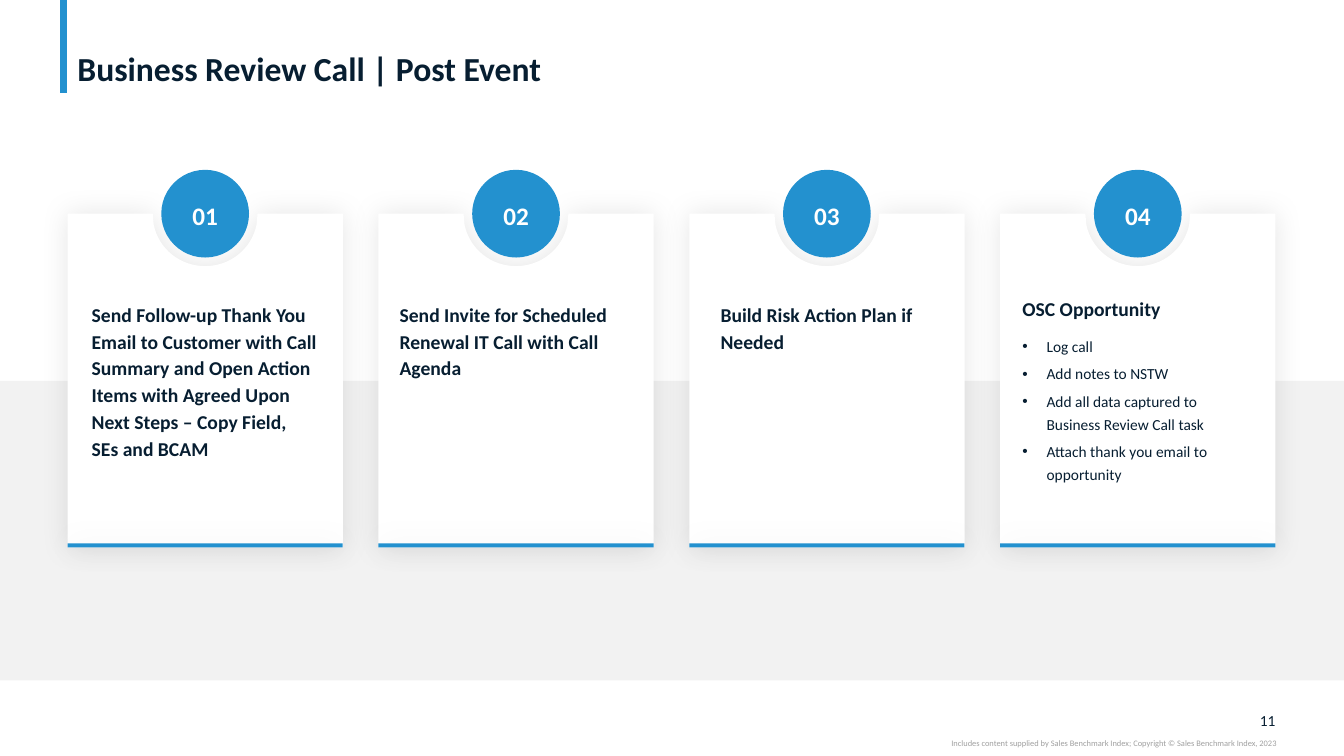
from lxml import etree
from pptx import Presentation
from pptx.dml.color import RGBColor
from pptx.enum.shapes import MSO_CONNECTOR, MSO_SHAPE
from pptx.enum.text import MSO_ANCHOR, PP_ALIGN
from pptx.oxml.ns import qn
from pptx.util import Inches, Pt

LINE = MSO_CONNECTOR.STRAIGHT
RECT, OVAL = MSO_SHAPE.RECTANGLE, MSO_SHAPE.OVAL
TOP, MIDDLE, BOTTOM = MSO_ANCHOR.TOP, MSO_ANCHOR.MIDDLE, MSO_ANCHOR.BOTTOM
LEFT, CENTER, RIGHT = PP_ALIGN.LEFT, PP_ALIGN.CENTER, PP_ALIGN.RIGHT

BLUE = RGBColor(0x23, 0x91, 0xCF)
NAVY = RGBColor(0x07, 0x1E, 0x31)
WHITE = RGBColor(0xFF, 0xFF, 0xFF)
PALE = RGBColor(0xF2, 0xF2, 0xF2)
GRAY = RGBColor(0xA0, 0xA0, 0xA0)
FONT = "Calibri"

WIDTH, HEIGHT = 13.33, 7.5
CARD_W, CARD_H, CARD_Y = 2.73, 3.31, 2.12
FIRST_X, LAST_X = 0.67, 9.92
DISC, BAR = 0.87, 0.04

# Left half of the notch, from the middle of the panel's top edge:
# two corners, then the control points of a curve down to its lowest point
NOTCH = [(-0.52, 0), (-0.51, 0.11), (-0.46, 0.35), (-0.25, 0.52)]
DEPTH = 0.52

# Heading, its left inset in the card, its width, height and spacing, bullets
CARDS = [
    ("Send Follow-up Thank You Email to Customer with Call Summary and Open "
     "Action Items with Agreed Upon Next Steps – Copy Field, SEs and BCAM",
     0.24, 2.24, 1.87, 1.14, []),
    ("Send Invite for Scheduled Renewal IT Call with Call Agenda",
     0.21, 2.3, 0.8, 1.14, []),
    ("Build Risk Action Plan if Needed", 0.31, 2.07, 0.53, 1.14, []),
    ("OSC Opportunity", 0.22, 2.24, 0.22, 0.9,
     ["Log call", "Add notes to NSTW",
      "Add all data captured to Business Review Call task",
      "Attach thank you email to opportunity"]),
]


def paint(shape, color):
    shape.fill.solid()
    shape.fill.fore_color.rgb = color
    shape.line.fill.background()
    shape.shadow.inherit = False


def add_glow(shape):
    """Give a painted shape a soft, centred shadow."""
    effects = shape._element.spPr.find(qn("a:effectLst"))
    shadow = etree.SubElement(effects, qn("a:outerShdw"), blurRad=str(Pt(20)),
                              dist="0", algn="ctr", rotWithShape="0")
    color = etree.SubElement(shadow, qn("a:srgbClr"), val="000000")
    etree.SubElement(color, qn("a:alpha"), val="10000")


def add_bullet(para):
    props = para._p.get_or_add_pPr()
    props.set("marL", str(Inches(0.24)))
    props.set("indent", str(-Inches(0.24)))
    etree.SubElement(props, qn("a:buFont"), typeface="Arial")
    etree.SubElement(props, qn("a:buChar"), char="•")


def write(shape, lines, size, color=NAVY, bold=False, align=LEFT, anchor=TOP,
          insets=(0, 0, 0, 0), spacing=1.0, after=0, bullets=False):
    frame = shape.text_frame
    frame.word_wrap = True
    frame.vertical_anchor = anchor
    (frame.margin_left, frame.margin_top,
     frame.margin_right, frame.margin_bottom) = map(Inches, insets)
    frame.text = "\n".join(lines)
    for para in frame.paragraphs:
        para.alignment = align
        para.line_spacing = spacing
        para.space_after = Pt(after)
        if bullets:
            para.level = 1
            add_bullet(para)
        for run in para.runs:
            font = run.font
            font.name, font.size, font.bold = FONT, Pt(size), bold
            font.color.rgb = color


def add_text(shapes, x, y, w, h, lines, size, **style):
    box = shapes.add_textbox(Inches(x), Inches(y), Inches(w), Inches(h))
    write(box, lines, size, **style)


def add_block(shapes, kind, x, y, w, h, color):
    block = shapes.add_shape(kind, Inches(x), Inches(y), Inches(w), Inches(h))
    paint(block, color)
    return block


def add_curve(lines):
    """Turn three line steps of an outline into one Bézier curve."""
    curve = etree.Element(qn("a:cubicBezTo"))
    lines[0].addprevious(curve)
    for line in lines:
        curve.append(line[0])
        line.getparent().remove(line)


def add_panel(shapes, x, y, w, h):
    """Draw a white panel with a round notch in its top edge."""
    mid = x + w / 2
    right = [(-dx, dy) for dx, dy in reversed(NOTCH)]
    notch = [(mid + dx, y + dy) for dx, dy in NOTCH + [(0, DEPTH)] + right]
    points = notch + [(x + w, y), (x + w, y + h), (x, y + h)]
    outline = shapes.build_freeform(Inches(x), Inches(y))
    outline.add_line_segments([(Inches(a), Inches(b)) for a, b in points])
    panel = outline.convert_to_shape()
    lines = list(panel._element.iter(qn("a:lnTo")))
    add_curve(lines[2:5])
    add_curve(lines[5:8])
    paint(panel, WHITE)
    add_glow(panel)


def add_card(slide, x, y, w, h, number, card):
    heading, inset, text_w, text_h, spacing, items = card
    group = slide.shapes.add_group_shape().shapes
    add_panel(group, x, y, w, h)
    add_glow(add_block(group, RECT, x, y + h - BAR, w, BAR, BLUE))
    disc = add_block(group, OVAL, x + (w - DISC) / 2, y - DISC / 2,
                     DISC, DISC, BLUE)
    write(disc, [f"{number:02}"], 18, color=WHITE, bold=True, align=CENTER,
          anchor=MIDDLE, insets=(0.08, 0.12, 0.08, 0.05), spacing=0.9)
    add_text(slide.shapes, x + inset, y + 0.85, text_w, text_h, [heading], 14,
             bold=True, spacing=spacing, after=6)
    if items:
        add_text(slide.shapes, x + inset, y + 1.18, text_w, 1.5, items, 11,
                 spacing=1.25, after=3, bullets=True)


def add_header(slide, x, y, w, h):
    mark = slide.shapes.add_connector(LINE, Inches(x), Inches(y),
                                      Inches(x), Inches(y + h))
    mark.line.color.rgb = BLUE
    mark.line.width = Pt(5)
    etree.SubElement(mark._element.spPr, qn("a:effectLst"))
    add_text(slide.shapes, x + 0.04, y + 0.04, w, h - 0.08,
             ["Business Review Call | Post Event"], 24, bold=True,
             anchor=BOTTOM, insets=(0.1, 0, 0.1, 0), spacing=0.9)


def add_footer(slide, x, y, w):
    add_text(slide.shapes, x + w - 0.34, y, 0.33, 0.19, ["11"], 11,
             align=RIGHT, anchor=MIDDLE)
    add_text(slide.shapes, x, y + 0.27, w, 0.1,
             ["Includes content supplied by Sales Benchmark Index; "
              "Copyright © Sales Benchmark Index, 2023"], 6,
             color=GRAY, align=RIGHT)


def main():
    deck = Presentation()
    deck.slide_width, deck.slide_height = Inches(WIDTH), Inches(HEIGHT)
    slide = deck.slides.add_slide(deck.slide_layouts[6])
    add_footer(slide, 7.5, 7.05, 5.16)
    add_block(slide.shapes, RECT, 0, 3.78, WIDTH, 2.97, PALE)
    add_header(slide, 0.63, 0, 11.99, 0.92)
    step = (LAST_X - FIRST_X) / (len(CARDS) - 1)
    for i, card in enumerate(CARDS):
        add_card(slide, FIRST_X + i * step, CARD_Y, CARD_W, CARD_H, i + 1, card)
    deck.save("out.pptx")


if __name__ == "__main__":
    main()
